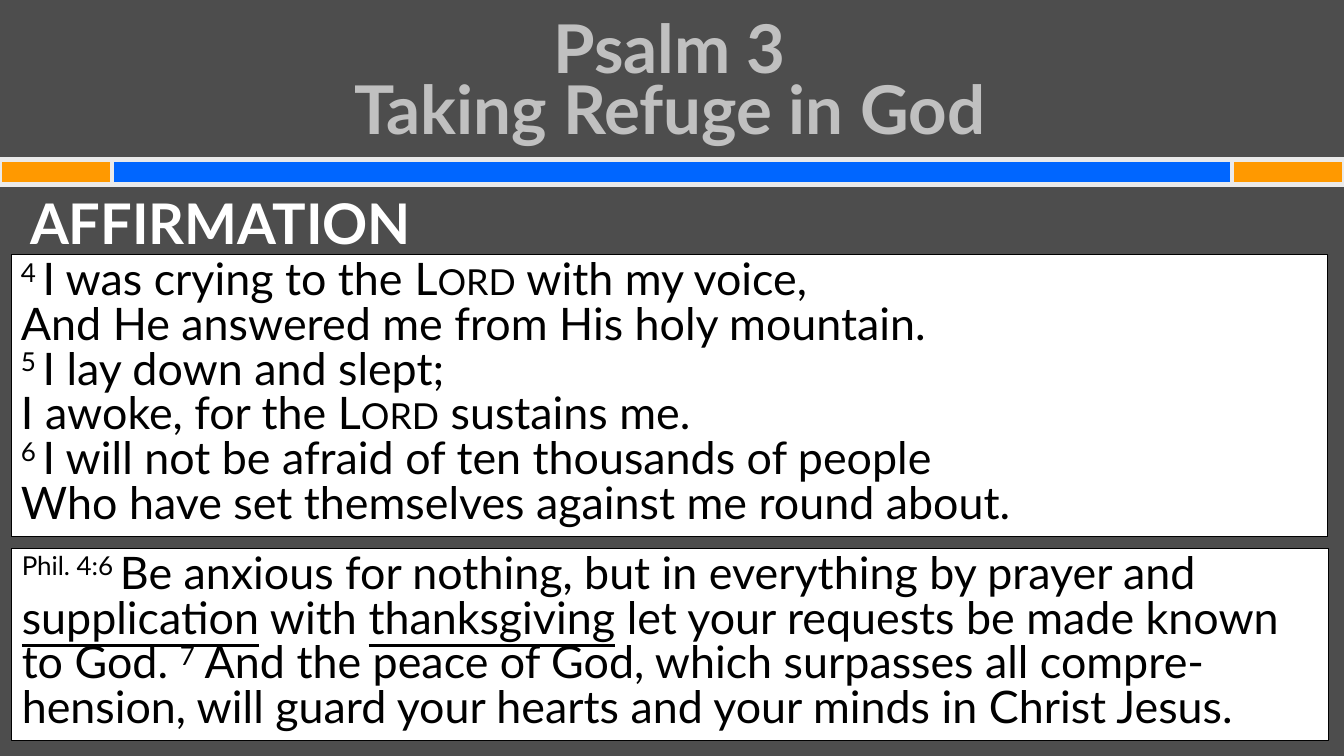
from pptx import Presentation
from pptx.dml.color import RGBColor
from pptx.enum.shapes import MSO_SHAPE
from pptx.enum.text import MSO_ANCHOR, MSO_AUTO_SIZE, PP_ALIGN
from pptx.util import Cm, Pt

COLORS = {
    "background": "4D4D4D", "blue": "0066FF", "orange": "FF9900",
    "bar_line": "EAEAEA", "title": "C0C0C0", "white": "FFFFFF", "black": "000000",
}
WIDTH, HEIGHT = 33.87, 19.05

# Font formats
TITLE = {"name": "Lato", "size": Pt(48), "bold": True}
HEADING = {"name": "Lato", "size": Pt(40), "bold": True}
VERSE = {"name": "Lato", "size": Pt(32), "bold": False}

# Extra run properties, by style
RUN_STYLES = {
    "plain": {},
    "number": {"baseline": "30000"},
    "small": {"cap": "small"},
    "underline": {"u": "sng"},
}

# Each line is a list of (text, style) runs
PSALM = [
    [("4 ", "number"), ("I was crying to the ", "plain"), ("Lord", "small"),
     (" with my voice,", "plain")],
    [("And He answered me from His holy mountain.", "plain")],
    [("5 ", "number"), ("I lay down and slept;", "plain")],
    [("I awoke, for the ", "plain"), ("Lord", "small"), (" sustains me.", "plain")],
    [("6 ", "number"), ("I will not be afraid of ten thousands of people", "plain")],
    [("Who have set themselves against me round about.", "plain")],
]
PHILIPPIANS = [
    [("Phil. 4:6 ", "number"),
     ("Be anxious for nothing, but in everything by prayer and ", "plain"),
     ("supplication", "underline"), (" with ", "plain"), ("thanksgiving", "underline"),
     (" let your requests be made known to God. ", "plain"), ("7", "number"),
     (" And the peace of God, which surpasses all compre-hension, "
      "will guard your hearts and your minds in Christ Jesus.", "plain")],
]


def color(name):
    return RGBColor.from_string(COLORS[name])


def set_font(font, formats, color_name):
    for attribute, value in formats.items():
        setattr(font, attribute, value)
    font.color.rgb = color(color_name)


def add_rectangle(slide, box, fill, line, line_width):
    shape = slide.shapes.add_shape(MSO_SHAPE.RECTANGLE, *map(Cm, box))
    shape.shadow.inherit = False
    shape.fill.solid()
    shape.fill.fore_color.rgb = color(fill)
    shape.line.color.rgb = color(line)
    shape.line.width = Pt(line_width)
    return shape


def add_divider(slide, box):
    """Blue bar with an orange block at each end."""
    left, top, width, height = box
    end = width / 12
    add_rectangle(slide, box, "blue", "bar_line", 3)
    for block_left in (left, left + width - end):
        add_rectangle(slide, (block_left, top, end, height), "orange", "bar_line", 3)


def add_label(slide, box, text, formats, color_name, paragraph_formats, anchor):
    frame = slide.shapes.add_textbox(*map(Cm, box)).text_frame
    frame.word_wrap = True
    frame.vertical_anchor = anchor
    paragraph = frame.paragraphs[0]
    paragraph.text = text
    for attribute, value in paragraph_formats.items():
        setattr(paragraph, attribute, value)
    for run in paragraph.runs:
        set_font(run.font, formats, color_name)


def add_passage(slide, box, lines):
    """White panel of verses."""
    frame = add_rectangle(slide, box, "white", "black", 0.75).text_frame
    frame.word_wrap = True
    frame.auto_size = MSO_AUTO_SIZE.SHAPE_TO_FIT_TEXT
    frame.vertical_anchor = MSO_ANCHOR.TOP
    for index, line in enumerate(lines):
        paragraph = frame.add_paragraph() if index else frame.paragraphs[0]
        paragraph.alignment = PP_ALIGN.LEFT
        paragraph.line_spacing = Pt(32)
        for text, style in line:
            run = paragraph.add_run()
            run.text = text
            set_font(run.font, VERSE, "black")
            for attribute, value in RUN_STYLES[style].items():
                run._r.get_or_add_rPr().set(attribute, value)


def main():
    presentation = Presentation()
    presentation.slide_width, presentation.slide_height = Cm(WIDTH), Cm(HEIGHT)
    slide = presentation.slides.add_slide(presentation.slide_layouts[6])
    slide.background.fill.solid()
    slide.background.fill.fore_color.rgb = color("background")

    # Header
    add_divider(slide, (0, 4.02, WIDTH, 0.63))
    add_label(slide, (0.51, 0.76, 32.74, 2.84), "Psalm 3\vTaking Refuge in God",
              TITLE, "title",
              {"alignment": PP_ALIGN.CENTER, "line_spacing": Pt(44)}, MSO_ANCHOR.MIDDLE)

    # Body
    add_label(slide, (0.51, 5.1, 32.74, 1.3), "AFFIRMATION", HEADING, "white",
              {"line_spacing": 0.7}, MSO_ANCHOR.TOP)
    add_passage(slide, (0.28, 6.42, 33.17, 7.09), PSALM)
    add_passage(slide, (0.3, 13.82, 33.17, 4.83), PHILIPPIANS)

    presentation.save("out.pptx")


if __name__ == "__main__":
    main()
